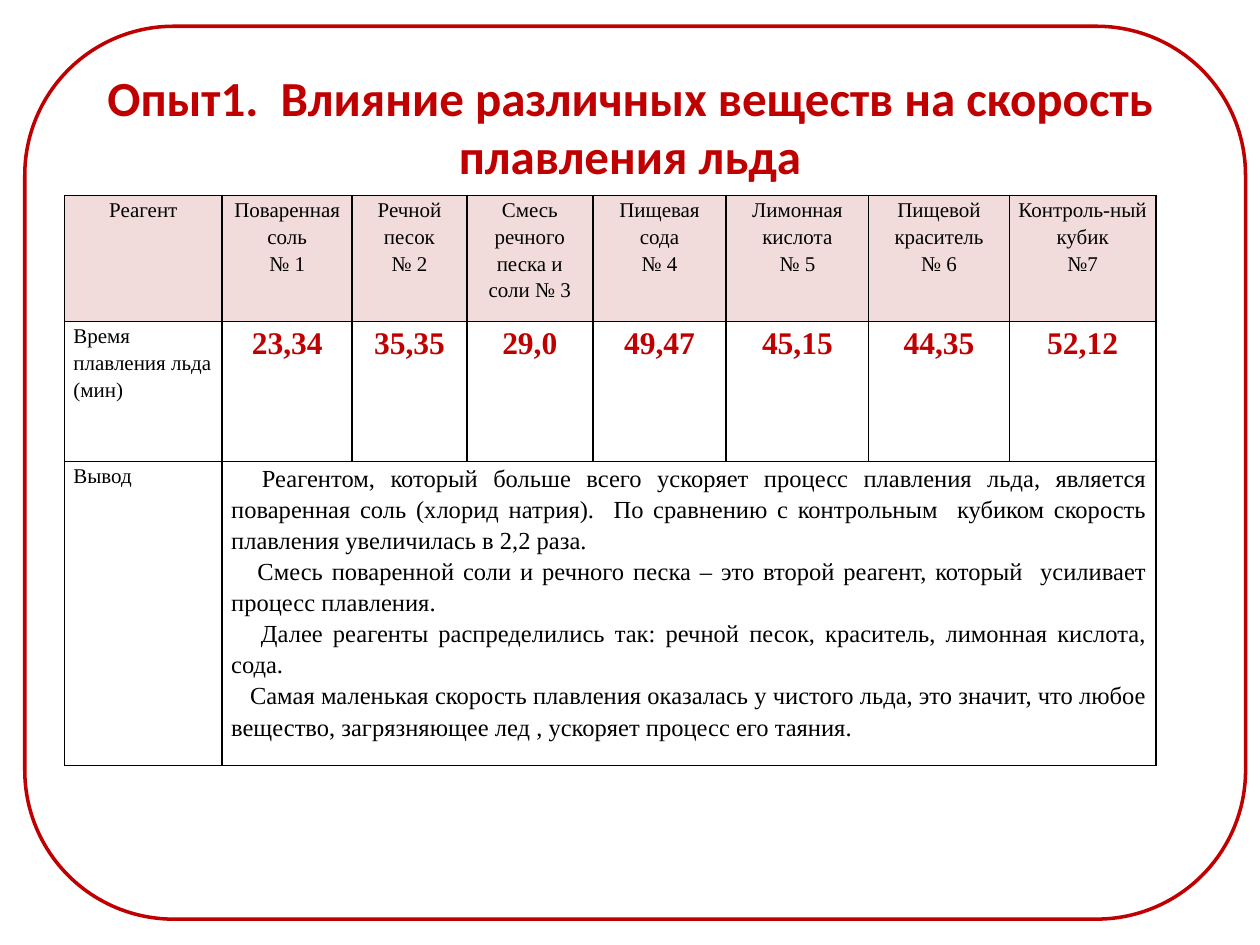
from dataclasses import dataclass

from lxml.etree import SubElement
from pptx import Presentation
from pptx.dml.color import RGBColor
from pptx.enum.shapes import MSO_SHAPE as Shape
from pptx.enum.text import MSO_ANCHOR as Anchor, PP_ALIGN as Align
from pptx.oxml.ns import qn
from pptx.util import Cm, Pt

RED = RGBColor(0xC0, 0x00, 0x00)
BLACK = RGBColor(0x00, 0x00, 0x00)
PINK = RGBColor(0xF2, 0xDC, 0xDB)
BODY_FONT = "Times New Roman"


@dataclass
class Reagent:
    name: tuple[str, ...]
    minutes: str
    width: float


@dataclass
class Style:
    size: int = 12
    align: Align = Align.LEFT
    color: RGBColor = BLACK
    bold: bool = False


@dataclass
class Finding:
    text: str
    indent: float


LABEL_WIDTH = 3.18
ROW_HEIGHTS = (2.54, 2.82, 5.64)
REAGENTS = (
    Reagent(("Поваренная соль", "№ 1"), "23,34", 2.62),
    Reagent(("Речной песок", "№ 2"), "35,35", 2.31),
    Reagent(("Смесь речного песка и соли № 3",), "29,0", 2.54),
    Reagent(("Пищевая сода", "№ 4"), "49,47", 2.69),
    Reagent(("Лимонная кислота", "№ 5"), "45,15", 2.87),
    Reagent(("Пищевой краситель", "№ 6"), "44,35", 2.84),
    Reagent(("Контроль-ный кубик", "№7"), "52,12", 2.95),
)
FINDINGS = (
    Finding("Реагентом, который больше всего ускоряет процесс плавления льда, "
            "является поваренная соль (хлорид натрия).  По сравнению с контрольным  "
            "кубиком скорость плавления увеличилась в 2,2 раза.", 0.62),
    Finding("Смесь поваренной соли и речного песка – это второй реагент, который  "
            "усиливает процесс плавления.", 0.53),
    Finding("Далее реагенты распределились так: речной песок, краситель, "
            "лимонная кислота, сода.", 0.6),
    Finding("Самая маленькая скорость плавления оказалась у чистого льда, это значит, "
            "что любое вещество, загрязняющее лед , ускоряет процесс его таяния.", 0.38),
)

LABEL = Style()
HEADER = Style(align=Align.CENTER)
VALUE = Style(18, Align.CENTER, RED, True)
CONCLUSION = Style(14, Align.JUSTIFY)


def add_borders(cell) -> None:
    tc_pr = cell._tc.get_or_add_tcPr()
    for side in ("a:lnL", "a:lnR", "a:lnT", "a:lnB"):
        ln = SubElement(tc_pr, qn(side), w=str(Pt(1)))
        fill = SubElement(ln, qn("a:solidFill"))
        SubElement(fill, qn("a:srgbClr"), val=str(BLACK))


def fill_cell(cell, lines: tuple[str, ...], style: Style) -> None:
    tf = cell.text_frame
    tf.text = "\n".join(lines)
    for p in tf.paragraphs:
        p.alignment, p.line_spacing = style.align, 1.15
        p.font.name, p.font.size = BODY_FONT, Pt(style.size)
        p.font.bold, p.font.color.rgb = style.bold, style.color


def add_title(s, text: str) -> None:
    tf = s.shapes.add_textbox(Cm(1.27), Cm(1.27), Cm(22.86), Cm(2.54)).text_frame
    tf.word_wrap, tf.vertical_anchor = True, Anchor.MIDDLE
    p = tf.paragraphs[0]
    p.text, p.alignment = text, Align.CENTER
    p.font.name, p.font.size = "Calibri", Pt(28)
    p.font.bold, p.font.color.rgb = True, RED


def add_results(s) -> None:
    widths = [LABEL_WIDTH] + [reagent.width for reagent in REAGENTS]
    table = s.shapes.add_table(len(ROW_HEIGHTS), len(widths), Cm(1.3), Cm(3.94),
                               Cm(sum(widths)), Cm(sum(ROW_HEIGHTS))).table
    table.first_row = table.horz_banding = False
    for column, width in zip(table.columns, widths):
        column.width = Cm(width)
    for row, height in zip(table.rows, ROW_HEIGHTS):
        row.height = Cm(height)

    # Borders, margins and fills
    for i, row in enumerate(table.rows):
        for cell in row.cells:
            add_borders(cell)
            cell.margin_left = cell.margin_right = Cm(0.18)
            cell.margin_top = cell.margin_bottom = 0
            if i == 0:
                cell.fill.solid()
                cell.fill.fore_color.rgb = PINK
            else:
                cell.fill.background()

    # Row labels
    fill_cell(table.cell(0, 0), ("Реагент",), HEADER)
    fill_cell(table.cell(1, 0), ("Время плавления льда", "(мин)"), LABEL)
    fill_cell(table.cell(2, 0), ("Вывод",), LABEL)

    # Reagents and melting times
    for col, reagent in enumerate(REAGENTS, start=1):
        fill_cell(table.cell(0, col), reagent.name, HEADER)
        fill_cell(table.cell(1, col), (reagent.minutes,), VALUE)

    # Conclusion across all reagents
    conclusion = table.cell(2, 1)
    conclusion.merge(table.cell(2, len(REAGENTS)))
    fill_cell(conclusion, tuple(f.text for f in FINDINGS), CONCLUSION)
    for p, finding in zip(conclusion.text_frame.paragraphs, FINDINGS):
        p._p.get_or_add_pPr().set("indent", str(Cm(finding.indent)))


def add_frame(s) -> None:
    sp = s.shapes.add_shape(Shape.ROUNDED_RECTANGLE, Cm(0.5), Cm(0.53), Cm(24.61), Cm(18))
    sp.shadow.inherit = False
    sp.fill.background()
    sp.line.color.rgb, sp.line.width = RED, Pt(2)


def main() -> None:
    prs = Presentation()
    prs.slide_width, prs.slide_height = Cm(25.4), Cm(19.05)
    s = prs.slides.add_slide(prs.slide_layouts[6])
    add_title(s, "Опыт1.  Влияние различных веществ на скорость плавления льда")
    add_results(s)
    add_frame(s)
    prs.save("out.pptx")


if __name__ == "__main__":
    main()
